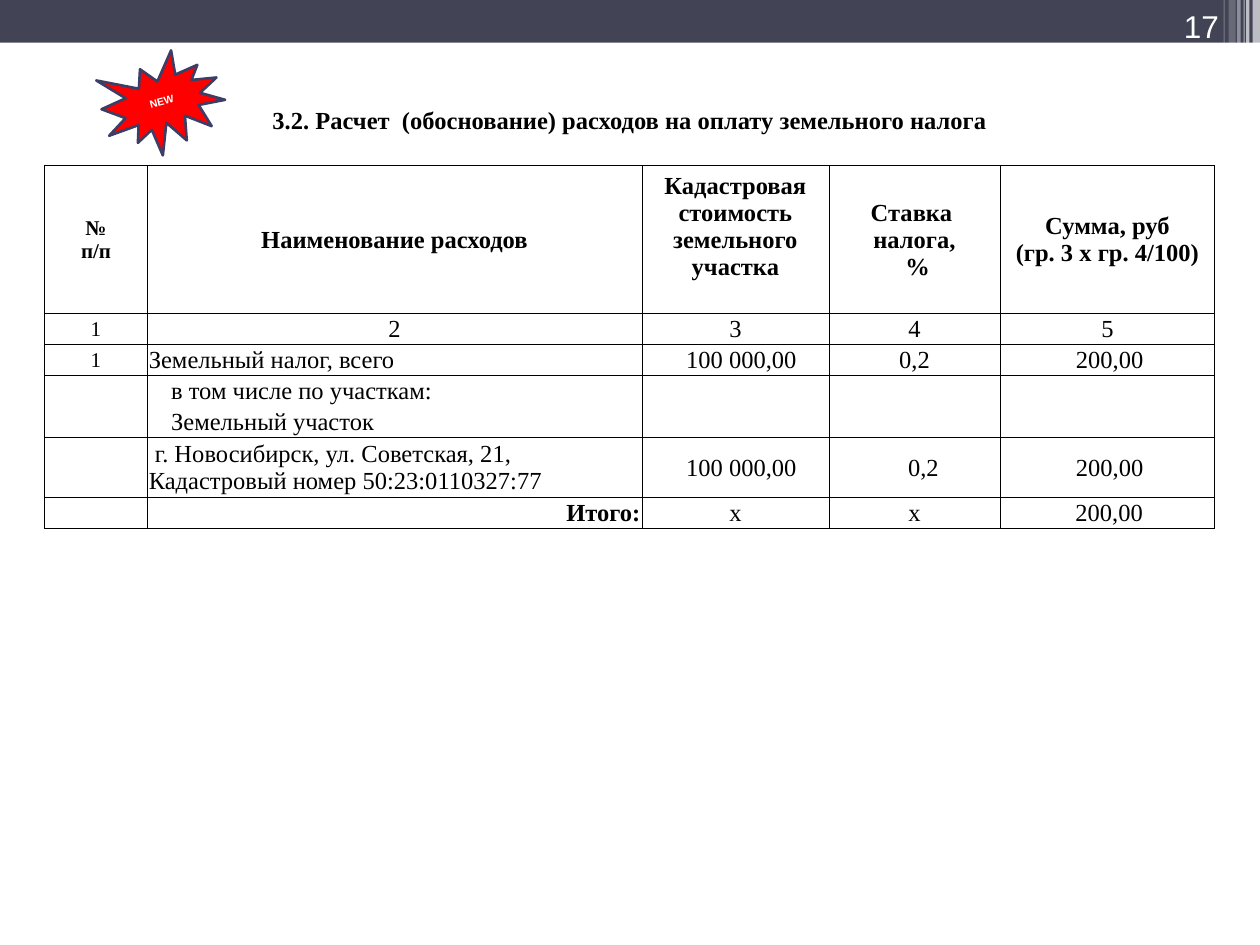
from lxml import etree
from pptx import Presentation
from pptx.dml.color import RGBColor
from pptx.enum.shapes import MSO_SHAPE
from pptx.enum.text import MSO_ANCHOR, PP_ALIGN
from pptx.oxml.ns import qn
from pptx.util import Cm, Pt

LEFT, CENTER, RIGHT = PP_ALIGN.LEFT, PP_ALIGN.CENTER, PP_ALIGN.RIGHT
MIDDLE, BOTTOM = MSO_ANCHOR.MIDDLE, MSO_ANCHOR.BOTTOM
RECTANGLE, BURST = MSO_SHAPE.RECTANGLE, MSO_SHAPE.EXPLOSION1
SERIF, SANS = "Times New Roman", "Arial"
BLACK, WHITE = "000000", "FFFFFF"
BLANK_LAYOUT = 6

# Right-hand stripes: left, width, height, opacity in percent
STRIPES = [
    (25.25, 0.15, 1.73, 65), (25.12, 0.07, 1.73, 65), (25.07, 0.02, 1.73, 60),
    (24.94, 0.07, 1.73, 40), (24.77, 0.14, 1.63, 20), (24.67, 0.02, 1.63, 30),
]
COLUMN_WIDTHS = [2.07, 9.97, 3.77, 3.45, 4.33]
LINE = 0.62
ROW_HEIGHTS = [LINE, LINE, 2.98, LINE, LINE, LINE, LINE, 1.21, LINE]
ROWS = [
    ["3.2. Расчет  (обоснование) расходов на оплату земельного налога"],
    [],
    ["№\vп/п", "Наименование расходов", "Кадастровая стоимость земельного участка",
     "Ставка \vналога,\v %", "Сумма, руб\v(гр. 3 х гр. 4/100)"],
    ["1", "2", "3", "4", "5"],
    ["1", "Земельный налог, всего", "100 000,00", "0,2", "200,00"],
    ["", "в том числе по участкам:"],
    ["", "Земельный участок"],
    ["", " г. Новосибирск, ул. Советская, 21, Кадастровый номер 50:23:0110327:77",
     "100 000,00", "0,2", "200,00"],
    ["", "Итого:", "х", "х", "200,00"],
]
TITLE_ROW, SPACER_ROW, HEADER_ROW, FIRST_PLOT_ROW, SECOND_PLOT_ROW, TOTAL_ROW = 0, 1, 2, 5, 6, 8
# Sides with a rule, for the rows that are not fully boxed
ROW_BORDERS = {TITLE_ROW: "", SPACER_ROW: "B", FIRST_PLOT_ROW: "LRT", SECOND_PLOT_ROW: "LRB"}
# Left margins that shift single cells off the column's axis: (row, column)
LEFT_MARGINS = {
    (4, 2): 0.27, (4, 4): 0.12, (5, 1): 0.48, (6, 1): 0.48,
    (7, 2): 0.27, (7, 3): 0.39, (7, 4): 0.12, (8, 4): 0.1,
}


def color(value):
    return RGBColor.from_string(value)


class SlideBuilder:
    def __init__(self, slide):
        self.slide = slide
        self.cell_margin = 0.03

    def style(self, paragraph, font, size, ink, bold=False, align=LEFT):
        paragraph.alignment = align
        for run in paragraph.runs:
            run.font.name, run.font.size, run.font.bold = font, Pt(size), bold
            run.font.color.rgb = color(ink)

    def shape(self, kind, left, top, width, height, fill, opacity=100):
        shape = self.slide.shapes.add_shape(kind, Cm(left), Cm(top), Cm(width), Cm(height))
        shape.shadow.inherit = False
        shape.fill.solid()
        shape.fill.fore_color.rgb = color(fill)
        shape.line.fill.background()
        if opacity < 100:
            fill_color = shape.fill._xPr.find(qn("a:solidFill"))[0]
            etree.SubElement(fill_color, qn("a:alpha"), val=str(opacity * 1000))
        return shape

    def slide_number(self, wording, left, top, width, height):
        box = self.slide.shapes.add_textbox(Cm(left), Cm(top), Cm(width), Cm(height))
        frame = box.text_frame
        frame.text, frame.word_wrap, frame.vertical_anchor = wording, True, BOTTOM
        self.style(frame.paragraphs[0], SANS, 18, WHITE, align=RIGHT)

    def badge(self, wording, left, top, width, height, rotation):
        badge = self.shape(BURST, left, top, width, height, "FF0000")
        badge.rotation = rotation
        badge.line.color.rgb = color("3D3E66")
        badge.line.width = Pt(1.5)
        frame = badge.text_frame
        frame.text, frame.vertical_anchor = wording, MIDDLE
        self.style(frame.paragraphs[0], SANS, 6, WHITE, bold=True, align=CENTER)

    def borders(self, cell, sides):
        properties = cell._tc.get_or_add_tcPr()
        for side in "LRTB":
            line = etree.SubElement(properties, qn("a:ln" + side), w=str(Pt(0.5)))
            if side in sides:
                fill = etree.SubElement(line, qn("a:solidFill"))
                etree.SubElement(fill, qn("a:srgbClr"), val=BLACK)
            else:
                etree.SubElement(line, qn("a:noFill"))

    def cell(self, cell, wording, size, bold, align, anchor, sides, left_margin):
        self.borders(cell, sides)
        cell.fill.background()
        cell.margin_left = Cm(left_margin)
        cell.margin_right = cell.margin_top = Cm(self.cell_margin)
        cell.margin_bottom = 0
        cell.vertical_anchor = anchor
        paragraph = cell.text_frame.paragraphs[0]
        if wording:
            paragraph.text = wording
            self.style(paragraph, SERIF, size, BLACK, bold=bold, align=align)
        else:  # keeps an empty cell from stretching its row
            etree.SubElement(paragraph._p, qn("a:endParaRPr"), sz=str(size * 100))

    def table(self, left, top):
        frame = self.slide.shapes.add_table(
            len(ROWS), len(COLUMN_WIDTHS), Cm(left), Cm(top),
            Cm(sum(COLUMN_WIDTHS)), Cm(sum(ROW_HEIGHTS)))
        table = frame.table
        table.first_row = table.horz_banding = False
        for column, width in zip(table.columns, COLUMN_WIDTHS):
            column.width = Cm(width)
        for row_index, (row, height, wordings) in enumerate(zip(table.rows, ROW_HEIGHTS, ROWS)):
            row.height = Cm(height)
            for column_index, cell in enumerate(row.cells):
                wording = wordings[column_index] if column_index < len(wordings) else ""
                total_label = (row_index, column_index) == (TOTAL_ROW, 1)
                small = not wording or (column_index == 0 and row_index > TITLE_ROW)
                align = CENTER
                if column_index == 1 and row_index > HEADER_ROW + 1:
                    align = RIGHT if total_label else LEFT
                self.cell(
                    cell, wording,
                    size=12 if small else 14,
                    bold=row_index <= HEADER_ROW or total_label,
                    align=align,
                    anchor=BOTTOM if row_index == TITLE_ROW else MIDDLE,
                    sides=ROW_BORDERS.get(row_index, "LRTB"),
                    left_margin=LEFT_MARGINS.get((row_index, column_index), self.cell_margin))
        table.cell(TITLE_ROW, 0).merge(table.cell(TITLE_ROW, len(COLUMN_WIDTHS) - 1))
        table.cell(HEADER_ROW, 2).margin_bottom = Cm(0.55)


def main():
    presentation = Presentation()
    presentation.slide_width, presentation.slide_height = Cm(25.4), Cm(19.05)
    builder = SlideBuilder(presentation.slides.add_slide(presentation.slide_layouts[BLANK_LAYOUT]))

    # Top band with stripes and slide number
    builder.shape(RECTANGLE, 0, 0, 25.4, 0.86, "424456")
    for left, width, height, opacity in STRIPES:
        builder.shape(RECTANGLE, left, 0, width, height, WHITE, opacity)
    builder.slide_number("17", 22.71, 0, 2.11, 1.02)

    # Badge and table
    builder.badge("NEW", 2.06, 1.09, 2.46, 2.01, 345.6)
    builder.table(0.9, 2.09)

    presentation.save("out.pptx")


if __name__ == "__main__":
    main()
